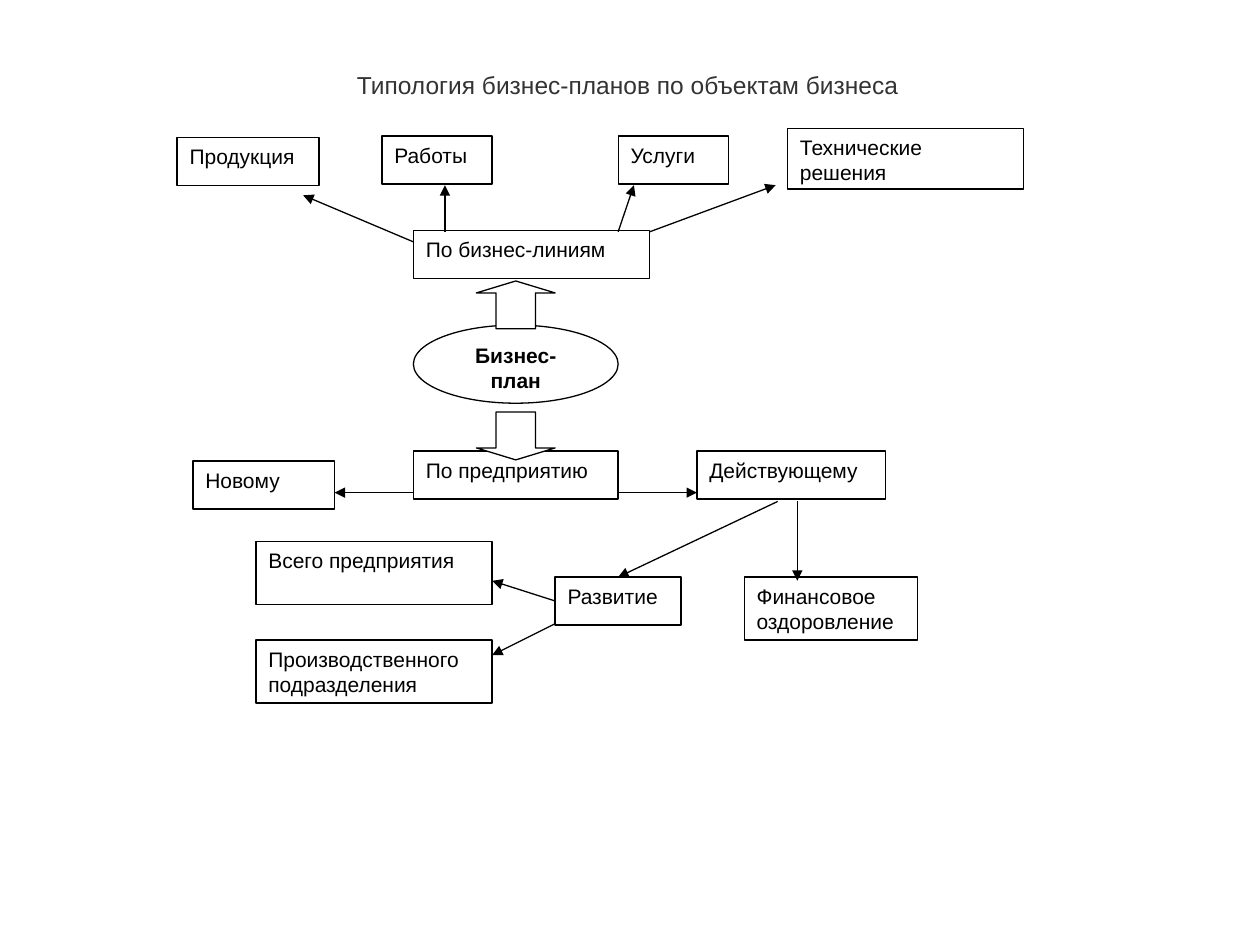
from dataclasses import dataclass

from lxml.etree import SubElement
from pptx import Presentation
from pptx.dml.color import RGBColor
from pptx.enum.shapes import MSO_CONNECTOR, MSO_SHAPE
from pptx.enum.text import MSO_ANCHOR, PP_ALIGN
from pptx.oxml.ns import qn
from pptx.util import Inches, Pt


@dataclass(frozen=True)
class Theme:
    font: str = "Arial"
    ink: RGBColor = RGBColor(0x00, 0x00, 0x00)
    title_ink: RGBColor = RGBColor(0x33, 0x33, 0x33)
    paper: RGBColor = RGBColor(0xFF, 0xFF, 0xFF)
    body_size: int = 12
    title_size: int = 14
    line_width: float = 0.75


TOP, LEFT = 0, 1
COLUMNS, ROWS = 320, 750
BOX_ROWS, TALL_ROWS = 38, 50


def apply(target, values):
    for name, value in values.items():
        setattr(target, name, value)


class Diagram:
    def __init__(self, presentation, theme):
        self.theme = theme
        self.slide = presentation.slides.add_slide(presentation.slide_layouts[6])
        self.column = presentation.slide_width / COLUMNS
        self.row = presentation.slide_height / ROWS

    def point(self, column, row):
        return round(column * self.column), round(row * self.row)

    def area(self, left, top, width, height):
        return *self.point(left, top), *self.point(width, height)

    def outline(self, element):
        element.line.color.rgb = self.theme.ink
        element.line.width = Pt(self.theme.line_width)

    def label(self, shape, text, frame_values, font_values, alignment=PP_ALIGN.LEFT):
        apply(shape.text_frame, {"word_wrap": True, **frame_values})
        paragraph = shape.text_frame.paragraphs[0]
        paragraph.alignment = alignment
        run = paragraph.add_run()
        run.text = text
        color = font_values.pop("color", self.theme.ink)
        apply(run.font, {"name": self.theme.font,
                         "size": Pt(self.theme.body_size), **font_values})
        run.font.color.rgb = color

    def shape(self, kind, area):
        shape = self.slide.shapes.add_shape(kind, *self.area(*area))
        shape.shadow.inherit = False
        shape.fill.solid()
        shape.fill.fore_color.rgb = self.theme.paper
        self.outline(shape)
        return shape

    def box(self, text, left, top, width, height=BOX_ROWS):
        shape = self.shape(MSO_SHAPE.RECTANGLE, (left, top, width, height))
        self.label(shape, text, {"vertical_anchor": MSO_ANCHOR.TOP}, {})
        return shape

    def center(self, text, *area):
        shape = self.shape(MSO_SHAPE.OVAL, area)
        self.label(shape, text, {"vertical_anchor": MSO_ANCHOR.TOP},
                   {"bold": True}, PP_ALIGN.CENTER)

    def block_arrow(self, kind, *area):
        shape = self.shape(kind, area)
        shape.adjustments[0], shape.adjustments[1] = 0.5, 0.25

    def arrow(self, start, end, start_joint=None, end_joint=None):
        connector = self.slide.shapes.add_connector(
            MSO_CONNECTOR.STRAIGHT, *self.point(*start), *self.point(*end))
        self.outline(connector)
        properties = connector._element.spPr
        SubElement(properties.find(qn("a:ln")), qn("a:tailEnd"), type="triangle")
        SubElement(properties, qn("a:effectLst"))
        if start_joint:
            connector.begin_connect(*start_joint)
        if end_joint:
            connector.end_connect(*end_joint)

    def title(self, text, *area):
        shape = self.slide.shapes.add_textbox(*self.area(*area))
        self.label(shape, text,
                   {"vertical_anchor": MSO_ANCHOR.BOTTOM, "margin_bottom": Inches(0.25)},
                   {"size": Pt(self.theme.title_size), "color": self.theme.title_ink})


def main():
    presentation = Presentation()
    apply(presentation, {"slide_width": Inches(10), "slide_height": Inches(7.5)})
    diagram = Diagram(presentation, Theme())

    boxes = [
        ("Продукция", 45, 109, 36),
        ("По бизнес-линиям", 105, 183, 60),
        ("Работы", 97, 108, 28),
        ("Услуги", 157, 108, 28),
        ("Производственного подразделения", 65, 508, 60, TALL_ROWS),
        ("Всего предприятия", 65, 430, 60, TALL_ROWS),
        ("Развитие", 141, 458, 32),
        ("Финансовое оздоровление", 189, 458, 44, TALL_ROWS),
        ("Технические решения", 200, 102, 60, 48),
        ("По предприятию", 105, 358, 52),
        ("Действующему", 177, 358, 48),
        ("Новому", 49, 366, 36),
    ]
    shapes = {box[0]: diagram.box(*box) for box in boxes}
    growth = shapes["Развитие"]

    diagram.center("Бизнес-план", 105, 258, 52, 62)
    diagram.block_arrow(MSO_SHAPE.UP_ARROW, 121, 223, 20, BOX_ROWS)
    diagram.block_arrow(MSO_SHAPE.DOWN_ARROW, 121, 327, 20, BOX_ROWS)

    arrows = [
        ((157, 391), (177, 391)),
        ((105, 391), (85, 391)),
        ((105, 192), (77, 155)),
        ((113, 184), (113, 147)),
        ((165, 184), (197, 147)),
        ((157, 184), (161, 147)),
        ((141, 495), (125, 520)),
        ((202.5, 398), (202.5, 461)),
        ((197.5, 398), (157, 458), None, (growth, TOP)),
        ((141, 477), (125, 461), (growth, LEFT)),
    ]
    for arrow in arrows:
        diagram.arrow(*arrow)

    diagram.title("Типология бизнес-планов по объектам бизнеса", 87.5, 0, 145, 104)
    presentation.save("out.pptx")


if __name__ == "__main__":
    main()
